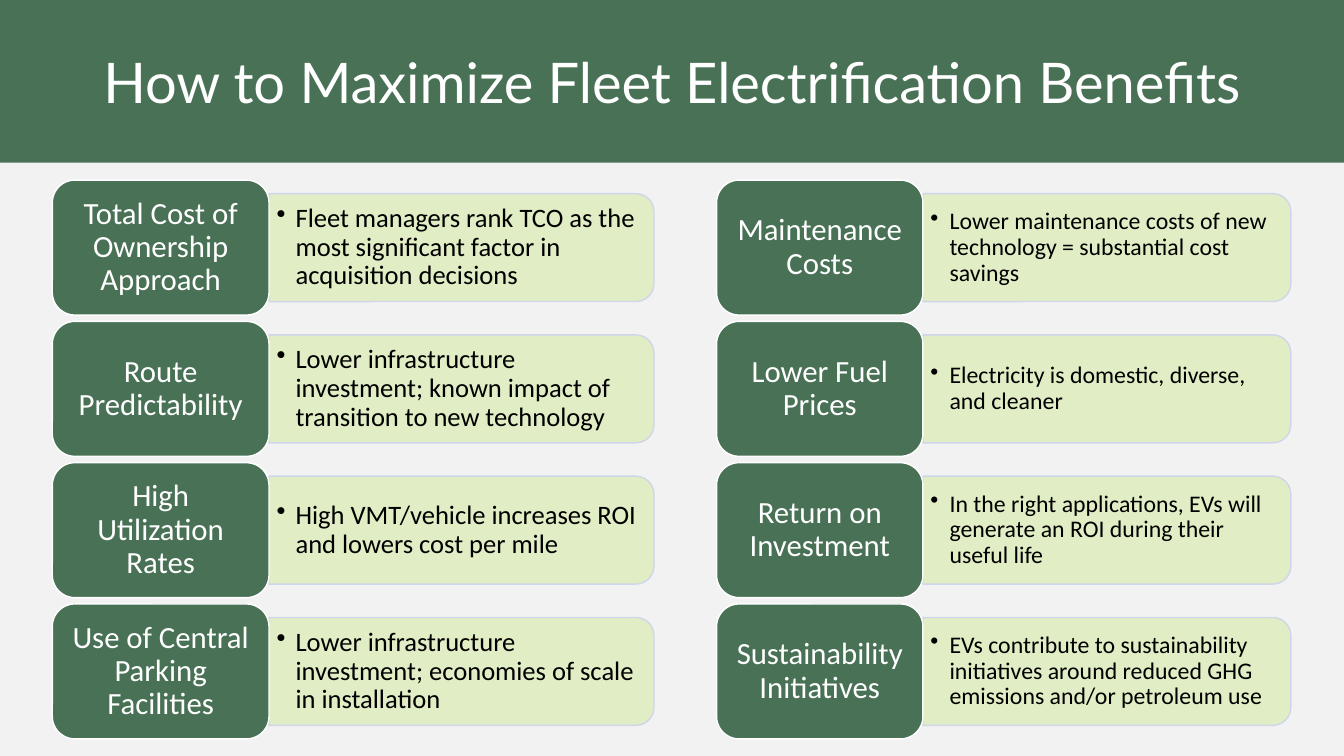
from dataclasses import dataclass

from lxml import etree
from pptx import Presentation
from pptx import util as u
from pptx.dml import color
from pptx.enum import shapes, text
from pptx.oxml import ns


@dataclass(frozen=True)
class Theme:
    """Colours, type sizes and fonts of the slide."""
    green: str = "487156"
    pale_green: str = "E0EDC0"
    pale_blue: str = "CFD5EA"
    grey: str = "F2F2F2"
    white: str = "FFFFFF"
    black: str = "000000"
    title_font: str = "Lato"
    body_font: str = "Calibri"
    title_size: int = 40
    label_size: int = 22


@dataclass(frozen=True)
class Column:
    """Horizontal layout in centimetres, detail type size and rows of a column."""
    left: float
    label_width: float
    panel_width: float
    detail_size: int
    rows: tuple


THEME = Theme()
SLIDE_WIDTH, SLIDE_HEIGHT = 33.87, 19.05
ROW_TOP, ROW_PITCH = 4.54, 3.56
LABEL_HEIGHT, PANEL_HEIGHT, DETAIL_HEIGHT = 3.4, 2.72, 2.44
BULLET_INDENT = 0.48

COLUMNS = (
    Column(1.32, 5.46, 9.7, 19, (
        ("Total Cost of Ownership Approach",
         "Fleet managers rank TCO as the most significant factor in acquisition decisions"),
        ("Route Predictability",
         "Lower infrastructure investment; known impact of transition to new technology"),
        ("High Utilization Rates",
         "High VMT/vehicle increases ROI and lowers cost per mile"),
        ("Use of Central Parking Facilities",
         "Lower infrastructure investment; economies of scale in installation"),
    )),
    Column(18.06, 5.2, 9.27, 17, (
        ("Maintenance Costs",
         "Lower maintenance costs of new technology = substantial cost savings"),
        ("Lower Fuel Prices",
         "Electricity is domestic, diverse, and cleaner"),
        ("Return on Investment",
         "In the right applications, EVs will generate an ROI during their useful life"),
        ("Sustainability Initiatives",
         "EVs contribute to sustainability initiatives around reduced GHG emissions and/or petroleum use"),
    )),
)


def rgb(value):
    """Turn a hexadecimal string into a colour."""
    return color.RGBColor.from_string(value)


def add_block(page, kind, left, top, width, height, fill, line=None):
    """Draw a filled preset shape, outlined when a line colour is given."""
    box = page.shapes.add_shape(kind, u.Cm(left), u.Cm(top), u.Cm(width), u.Cm(height))
    box.shadow.inherit = False
    box.fill.solid()
    box.fill.fore_color.rgb = rgb(fill)
    if line:
        box.line.color.rgb = rgb(line)
        box.line.width = u.Pt(1)
    else:
        box.line.fill.background()
    return box


def set_opacity(box, percent):
    """Make the solid fill of a shape partly transparent."""
    fill_color = box.fill._xPr.find(ns.qn("a:solidFill"))[0]
    etree.SubElement(fill_color, ns.qn("a:alpha")).set("val", str(percent * 1000))


def add_bullet(para):
    """Give a paragraph a round bullet with a hanging indent."""
    properties = para._p.get_or_add_pPr()
    indent = u.Cm(BULLET_INDENT)
    properties.set("marL", str(indent))
    properties.set("indent", str(-indent))
    etree.SubElement(properties, ns.qn("a:buChar")).set("char", "•")


def write(box, words, *, size, ink, font=THEME.body_font, align=text.PP_ALIGN.CENTER,
          spacing=0.9, inset=(0.23, 0.13), bullet=False):
    """Fill a shape with one vertically centred paragraph."""
    frame = box.text_frame
    frame.word_wrap = True
    frame.vertical_anchor = text.MSO_ANCHOR.MIDDLE
    frame.margin_left = frame.margin_right = u.Cm(inset[0])
    frame.margin_top = frame.margin_bottom = u.Cm(inset[1])
    para = frame.paragraphs[0]
    if bullet:
        add_bullet(para)
    para.alignment = align
    para.line_spacing = spacing
    span = para.add_run()
    span.text = words
    span.font.name = font
    span.font.size = u.Pt(size)
    span.font.color.rgb = rgb(ink)


def add_panel(page, left, middle, width):
    """Draw a pale panel whose right-hand corners are rounded."""
    panel = add_block(page, shapes.MSO_SHAPE.ROUND_2_SAME_RECTANGLE,
                      left + (width - PANEL_HEIGHT) / 2, middle - width / 2,
                      PANEL_HEIGHT, width, THEME.pale_green, THEME.pale_blue)
    panel.rotation = 90
    set_opacity(panel, 90)


def add_row(page, column, top, label, detail):
    """Draw one label with its explanatory panel."""
    middle = top + LABEL_HEIGHT / 2
    panel_left = column.left + column.label_width
    add_panel(page, panel_left, middle, column.panel_width)
    box = page.shapes.add_textbox(u.Cm(panel_left), u.Cm(middle - DETAIL_HEIGHT / 2),
                                  u.Cm(column.panel_width - 0.13), u.Cm(DETAIL_HEIGHT))
    write(box, detail, size=column.detail_size, ink=THEME.black,
          align=text.PP_ALIGN.LEFT, inset=(0.19, 0.1), bullet=True)
    box = add_block(page, shapes.MSO_SHAPE.ROUNDED_RECTANGLE, column.left, top,
                    column.label_width, LABEL_HEIGHT, THEME.green, THEME.white)
    write(box, label, size=THEME.label_size, ink=THEME.white)


def main():
    """Build the slide and save the deck."""
    deck = Presentation()
    deck.slide_width, deck.slide_height = u.Cm(SLIDE_WIDTH), u.Cm(SLIDE_HEIGHT)
    page = deck.slides.add_slide(deck.slide_layouts[6])
    add_block(page, shapes.MSO_SHAPE.RECTANGLE, 0, 2.64, SLIDE_WIDTH,
              SLIDE_HEIGHT - 2.64, THEME.grey)
    for column in COLUMNS:
        for index, (label, detail) in enumerate(column.rows):
            add_row(page, column, ROW_TOP + index * ROW_PITCH, label, detail)
    banner = add_block(page, shapes.MSO_SHAPE.RECTANGLE, 0, 0, SLIDE_WIDTH, 4.1, THEME.green)
    write(banner, "How to Maximize Fleet Electrification Benefits", size=THEME.title_size,
          ink=THEME.white, font=THEME.title_font, spacing=1.0)
    deck.save("out.pptx")


if __name__ == "__main__":
    main()
